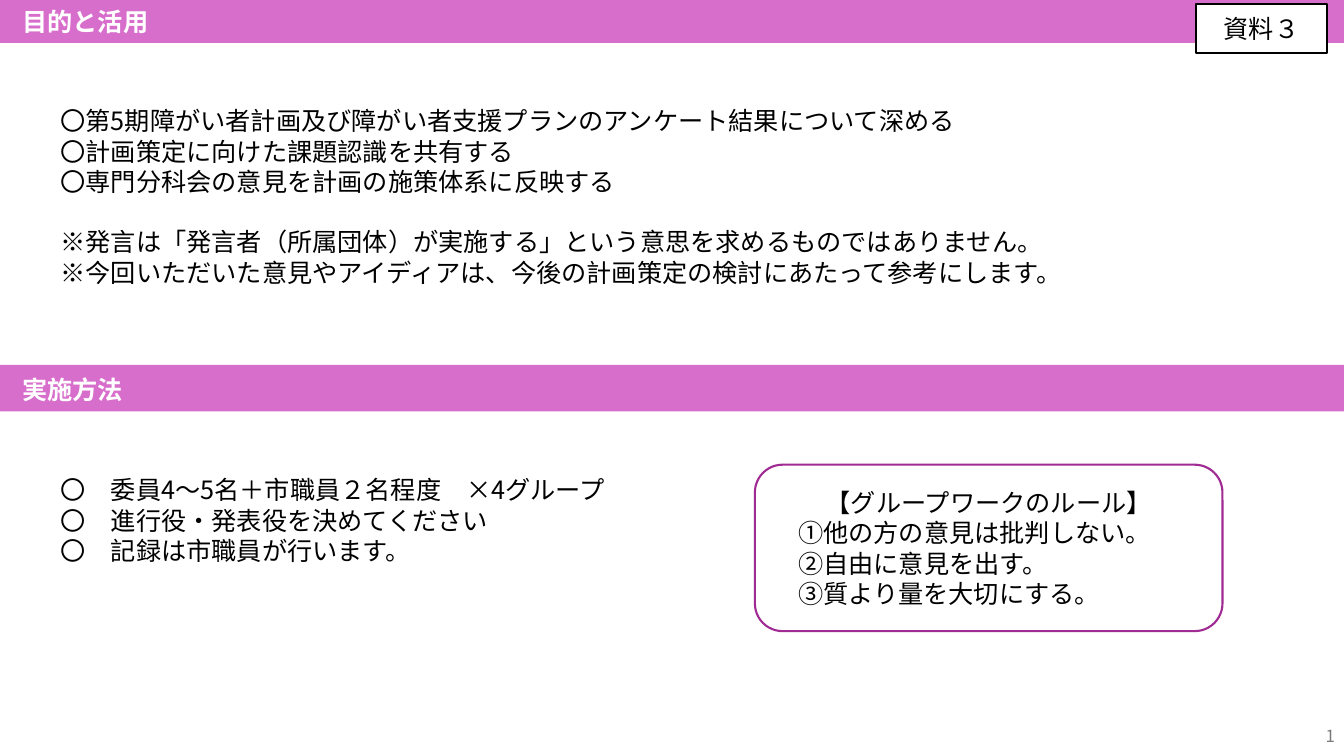
import pptx
import pptx.dml.color
import pptx.enum.shapes
import pptx.enum.text
import pptx.oxml.ns
import pptx.util
from lxml import etree

Pt = pptx.util.Pt
RGBColor = pptx.dml.color.RGBColor
ALIGN = pptx.enum.text.PP_ALIGN
ANCHOR = pptx.enum.text.MSO_ANCHOR
SHAPE = pptx.enum.shapes.MSO_SHAPE

PINK = RGBColor(0xD8, 0x6E, 0xCC)
PURPLE = RGBColor(0xA0, 0x2B, 0x93)
GRAY = RGBColor(0x79, 0x79, 0x79)
BLACK = RGBColor(0, 0, 0)
WHITE = RGBColor(255, 255, 255)
FONT = "Noto Sans CJK JP"
LINE_RATIO = 1.2
INSET = 3.6

PURPOSES = [
    "〇第5期障がい者計画及び障がい者支援プランのアンケート結果について深める",
    "〇計画策定に向けた課題認識を共有する",
    "〇専門分科会の意見を計画の施策体系に反映する",
]
NOTES = [
    "※発言は「発言者（所属団体）が実施する」という意思を求めるものではありません。",
    "※今回いただいた意見やアイディアは、今後の計画策定の検討にあたって参考にします。",
]
METHODS = [
    "〇　委員4〜5名＋市職員２名程度　×4グループ",
    "〇　進行役・発表役を決めてください",
    "〇　記録は市職員が行います。",
]
RULES = [
    "【グループワークのルール】",
    "①他の方の意見は批判しない。",
    "②自由に意見を出す。",
    "③質より量を大切にする。",
]


def write_lines(frame, lines, size=18, color=BLACK, bold=False, align=ALIGN.LEFT):
    frame.word_wrap = True
    frame.text = "\n".join(lines)
    for paragraph in frame.paragraphs:
        paragraph.alignment = align
        paragraph.line_spacing = Pt(size * LINE_RATIO)
        font = paragraph.font
        font.size = Pt(size)
        font.bold = bold
        font.color.rgb = color
        font.name = FONT
        properties = paragraph._p.pPr.defRPr
        etree.SubElement(properties, pptx.oxml.ns.qn("a:ea"), typeface=FONT)
    return frame.paragraphs


def add_text(slide, left, top, width, height, lines, **style):
    frame = slide.shapes.add_textbox(Pt(left), Pt(top), Pt(width), Pt(height)).text_frame
    frame.margin_left = frame.margin_right = Pt(INSET)
    frame.margin_top = frame.margin_bottom = Pt(INSET)
    return write_lines(frame, lines, **style)


def add_box(slide, kind, left, top, width, height, fill, line=None):
    shape = slide.shapes.add_shape(kind, Pt(left), Pt(top), Pt(width), Pt(height))
    shape.shadow.inherit = False
    shape.fill.solid()
    shape.fill.fore_color.rgb = fill
    if line is None:
        shape.line.fill.background()
    else:
        shape.line.color.rgb = line
        shape.line.width = Pt(1.5)
    shape.text_frame.vertical_anchor = ANCHOR.MIDDLE
    return shape


def add_heading(slide, left, top, text):
    add_box(slide, SHAPE.RECTANGLE, left, top, 961, 33.2, PINK)
    add_text(slide, 12.4, top + 3.6, 948, 28.8, [text], color=WHITE, bold=True)


def add_rules(slide):
    box = add_box(slide, SHAPE.ROUNDED_RECTANGLE, 539.2, 331.9, 334, 118.9, WHITE, PURPLE)
    heading, *rules = write_lines(box.text_frame, RULES)
    heading.alignment = ALIGN.CENTER
    for rule in rules:
        rule._p.pPr.set("marL", str(Pt(18)))


def add_document_label(slide):
    box = add_box(slide, SHAPE.RECTANGLE, 854.6, 2.9, 93, 35.2, WHITE, BLACK)
    write_lines(box.text_frame, ["資料３"], align=ALIGN.CENTER)


def main():
    presentation = pptx.Presentation()
    presentation.slide_width = Pt(960)
    presentation.slide_height = Pt(540)
    slide = presentation.slides.add_slide(presentation.slide_layouts[6])

    add_heading(slide, 0, -2.5, "目的と活用")
    add_heading(slide, -0.7, 260.6, "実施方法")
    paragraphs = add_text(slide, 39.6, 72, 802, 138.2, PURPOSES + NOTES)
    paragraphs[len(PURPOSES)].space_before = Pt(18 * LINE_RATIO)
    add_text(slide, 39.6, 335.5, 802, 72.7, METHODS)
    add_rules(slide)
    add_document_label(slide)
    add_text(slide, 745.2, 515, 212, 22, ["1"], size=12, color=GRAY, align=ALIGN.RIGHT)

    presentation.save("out.pptx")


if __name__ == "__main__":
    main()
